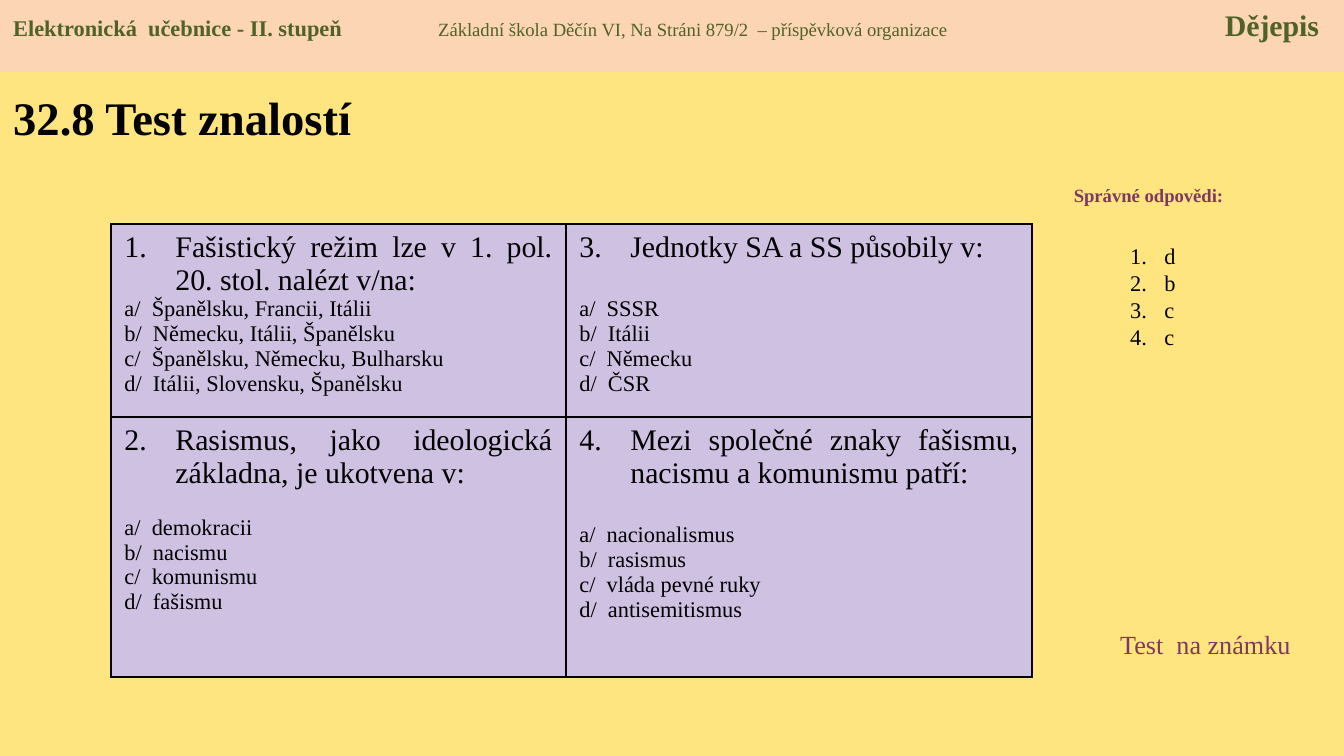
import pptx
import pptx.util
import pptx.dml.color
import pptx.enum.shapes
import pptx.enum.text
import pptx.oxml
import pptx.oxml.ns

RGB = pptx.dml.color.RGBColor
ALIGN = pptx.enum.text.PP_ALIGN
ANCHOR = pptx.enum.text.MSO_ANCHOR
Pt = pptx.util.Pt

YELLOW = RGB(0xFF, 0xE5, 0x7F)
PEACH = RGB(0xFC, 0xD5, 0xB5)
LILAC = RGB(0xCE, 0xC1, 0xE2)
GREEN = RGB(0x4F, 0x62, 0x28)
PURPLE = RGB(0x81, 0x37, 0x63)
BLACK = RGB(0, 0, 0)
FONT = "Times New Roman"

# (question, gap before the answers in points, answers), by table row
QUESTIONS = [
    [(1, "Fašistický režim lze v 1. pol. 20. stol. nalézt v/na:", 0,
      ["Španělsku, Francii, Itálii", "Německu, Itálii, Španělsku",
       "Španělsku, Německu, Bulharsku", "Itálii, Slovensku, Španělsku"]),
     (3, "Jednotky SA a SS působily v:", 17.5,
      ["SSSR", "Itálii", "Německu", "ČSR"])],
    [(2, "Rasismus, jako ideologická základna, je ukotvena v:", 13.5,
      ["demokracii", "nacismu", "komunismu", "fašismu"]),
     (4, "Mezi společné znaky fašismu, nacismu a komunismu patří:", 17.5,
      ["nacionalismus", "rasismus", "vláda pevné ruky", "antisemitismus"])],
]


def px(n):
    return round(n * 914400 / 134.4)


def style(font, size, color=BLACK, bold=False):
    font.name, font.size, font.bold = FONT, Pt(size), bold
    font.color.rgb = color


def add_xml(parent, xml):
    ns = pptx.oxml.ns.nsdecls("a")
    parent.append(pptx.oxml.parse_xml(xml.replace("/>", f" {ns}/>", 1) if xml.count("<") == 1
                                      else xml.replace(">", f" {ns}>", 1)))


def next_paragraph(tf, first):
    return tf.paragraphs[0] if first else tf.add_paragraph()


def number(p, start, indent):
    pPr = p._p.get_or_add_pPr()
    pPr.set("marL", str(px(indent)))
    pPr.set("indent", str(-px(indent)))
    add_xml(pPr, f'<a:buAutoNum type="arabicPeriod" startAt="{start}"/>')


def text_box(s, box, text, size, color=BLACK, bold=False, align=ALIGN.LEFT, anchor=ANCHOR.TOP):
    tf = s.shapes.add_textbox(*map(px, box)).text_frame
    tf.word_wrap = True
    tf.vertical_anchor = anchor
    p = tf.paragraphs[0]
    p.text, p.alignment = text, align
    style(p.font, size, color, bold)


def header(s, box):
    sp = s.shapes.add_shape(pptx.enum.shapes.MSO_SHAPE.RECTANGLE, *map(px, box))
    sp.shadow.inherit = False
    sp.fill.solid()
    sp.fill.fore_color.rgb = PEACH
    sp.line.fill.background()
    tf = sp.text_frame
    tf.vertical_anchor = ANCHOR.TOP
    p = tf.paragraphs[0]
    p.alignment = ALIGN.LEFT
    add_xml(p._p.get_or_add_pPr(),
            f'<a:tabLst><a:tab pos="{px(425)}" algn="l"/>'
            f'<a:tab pos="{px(1306)}" algn="r"/></a:tabLst>')
    for text, size, bold in [
        ("Elektronická  učebnice - II. stupeň\t", 12, True),
        ("Základní škola Děčín VI, Na Stráni 879/2  – příspěvková organizace\t", 10, False),
        ("Dějepis", 16, True),
    ]:
        r = p.add_run()
        r.text = text
        style(r.font, size, GREEN, bold)


def question_cell(cell, start, question, gap, answers):
    cell.fill.solid()
    cell.fill.fore_color.rgb = LILAC
    tcPr = cell._tc.get_or_add_tcPr()
    for i, side in enumerate(("lnL", "lnR", "lnT", "lnB")):
        border = pptx.oxml.parse_xml(
            f'<a:{side} {pptx.oxml.ns.nsdecls("a")} w="12700"><a:solidFill>'
            f'<a:srgbClr val="{BLACK}"/></a:solidFill></a:{side}>')
        tcPr.insert(i, border)  # borders come before the fill
    tf = cell.text_frame
    p = tf.paragraphs[0]
    p.text, p.alignment = question, ALIGN.JUSTIFY
    number(p, start, 51)
    style(p.font, 16)
    for i, (letter, answer) in enumerate(zip("abcd", answers)):
        p = tf.add_paragraph()
        p.text, p.alignment = f"{letter}/  {answer}", ALIGN.JUSTIFY
        p.space_before = Pt(0 if i else gap)
        style(p.font, 12)


def question_table(s, box):
    table = s.shapes.add_table(2, 2, *map(px, box)).table
    for col, width in zip(table.columns, (455, 466)):
        col.width = px(width)
    for row, height in zip(table.rows, (193, 260)):
        row.height = px(height)
    for r, row in enumerate(QUESTIONS):
        for c, entry in enumerate(row):
            question_cell(table.cell(r, c), *entry)


def answer_key(s, box):
    x, y, w, h = box
    text_box(s, (x, y, 211, 36), "Správné odpovědi:", 10, PURPLE, True, ALIGN.CENTER)
    tf = s.shapes.add_textbox(px(x + 74), px(y + 59), px(w - 74), px(h - 59)).text_frame
    tf.word_wrap = True
    for i, letter in enumerate("dbcc"):
        p = next_paragraph(tf, i == 0)
        p.text = letter
        number(p, 1, 34)
        style(p.font, 12)


def main():
    prs = pptx.Presentation()
    prs.slide_width, prs.slide_height = px(1344), px(756)
    s = prs.slides.add_slide(prs.slide_layouts[6])
    s.background.fill.solid()
    s.background.fill.fore_color.rgb = YELLOW

    text_box(s, (0, 73, 429, 87), "32.8 Test znalostí", 25, bold=True, anchor=ANCHOR.MIDDLE)
    question_table(s, (111, 224, 921, 453))
    answer_key(s, (1043, 177, 211, 207))
    text_box(s, (1107, 622, 211, 46), "Test  na známku", 14, PURPLE)
    header(s, (0, 0, 1344, 72))
    prs.save("out.pptx")


if __name__ == "__main__":
    main()
